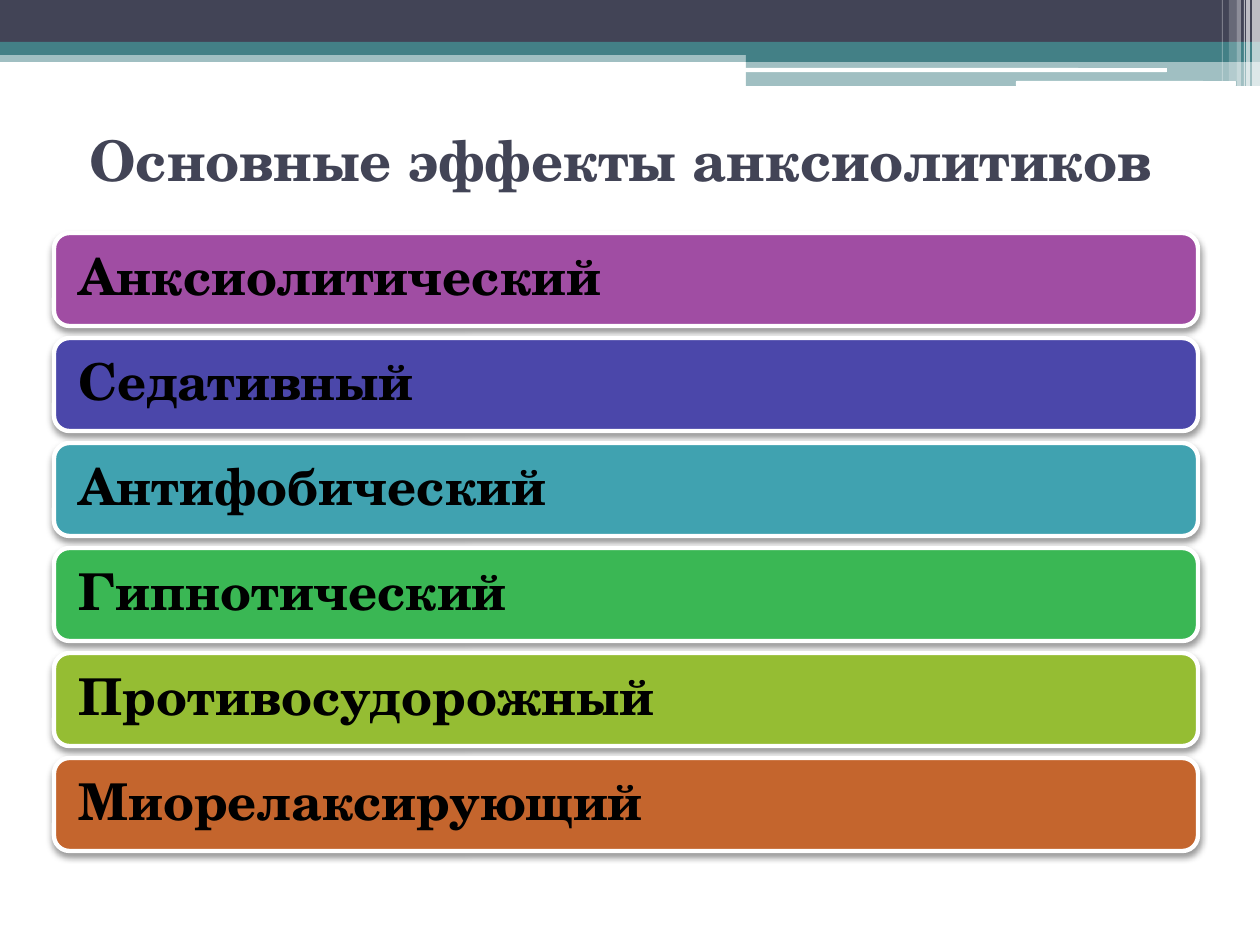
"""Builds a slide listing the main effects of anxiolytics as six coloured bars."""
from lxml import etree
from pptx import Presentation
from pptx.dml.color import RGBColor
from pptx.enum.shapes import MSO_SHAPE as Shape
from pptx.enum.text import MSO_ANCHOR as Anchor, PP_ALIGN as Align
from pptx.oxml import parse_xml
from pptx.oxml.ns import nsdecls, qn
from pptx.util import Pt

PX = 914400 / 126
FONT = "TeX Gyre Schola"
NAVY, TEAL, WHITE, BLACK = "424456", "438086", "FFFFFF", "000000"
SHADOW = (
    f'<a:effectLst {nsdecls("a")}><a:outerShdw blurRad="52000" dist="25400" dir="5400000" rotWithShape="0">'
    f'<a:srgbClr val="{BLACK}"><a:alpha val="40000"/></a:srgbClr></a:outerShdw></a:effectLst>'
)


def add_block(kind, box, color, opacity=100):
    shape = slide.shapes.add_shape(kind, *[round(length * PX) for length in box])
    shape.shadow.inherit = False
    shape.line.fill.background()
    shape.fill.solid()
    shape.fill.fore_color.rgb = RGBColor.from_string(color)
    if opacity < 100:
        fill_color = shape.fill._xPr.find(qn("a:solidFill"))[0]
        etree.SubElement(fill_color, qn("a:alpha"), val=str(opacity * 1000))
    return shape


def write_text(shape, text, size, color, align, inset):
    frame = shape.text_frame
    frame.word_wrap = True
    frame.vertical_anchor = Anchor.MIDDLE
    frame.margin_left = frame.margin_right = round(inset * PX)
    paragraph = frame.paragraphs[0]
    paragraph.text = text
    paragraph.alignment = align
    paragraph.font.name = FONT
    paragraph.font.size = Pt(size)
    paragraph.font.bold = True
    paragraph.font.color.rgb = RGBColor.from_string(color)
    return paragraph


presentation = Presentation()
presentation.slide_width = round(1260 * PX)
presentation.slide_height = round(945 * PX)
slide = presentation.slides.add_slide(presentation.slide_layouts[6])

header_bands = [
    ((0, 50, 1260, 12), TEAL, 50),
    ((0, 0, 1260, 43), NAVY, 100),
    ((0, 42, 1260, 13), TEAL, 100),
    ((746, 49, 514, 13), TEAL, 100),
    ((746, 61, 514, 25), TEAL, 50),
]
for box, color, opacity in header_bands:
    add_block(Shape.RECTANGLE, box, color, opacity)

for box in [(745, 68, 422, 4), (1016, 81, 220, 5)]:
    add_block(Shape.ROUNDED_RECTANGLE, box, WHITE)

corner_stripes = [
    (1252, 8, 86, 65),
    (1246, 4, 86, 65),
    (1244, 1, 86, 60),
    (1237, 4, 86, 40),
    (1229, 8, 81, 20),
    (1222, 1, 81, 30),
]
for left, width, height, opacity in corner_stripes:
    add_block(Shape.RECTANGLE, (left, 0, width, height), WHITE, opacity)

title = slide.shapes.add_textbox(*[round(length * PX) for length in (54, 86, 1134, 147)])
write_text(title, "Основные эффекты анксиолитиков", 32, NAVY, Align.CENTER, 12)

effects = [
    ("Анксиолитический", "A04DA3"),
    ("Седативный", "4B47AA"),
    ("Антифобический", "40A2B0"),
    ("Гипнотический", "3AB754"),
    ("Противосудорожный", "95BD33"),
    ("Миорелаксирующий", "C4652D"),
]
for row, (effect, color) in enumerate(effects):
    bar = add_block(Shape.ROUNDED_RECTANGLE, (54, 233 + row * 105, 1144, 93), color)
    bar.line.color.rgb = RGBColor.from_string(WHITE)
    bar.line.width = Pt(2.5)
    properties = bar._element.spPr
    properties.replace(properties.find(qn("a:effectLst")), parse_xml(SHADOW))
    paragraph = write_text(bar, effect, 29, BLACK, Align.LEFT, 20)
    paragraph.line_spacing = 0.9

presentation.save("out.pptx")
